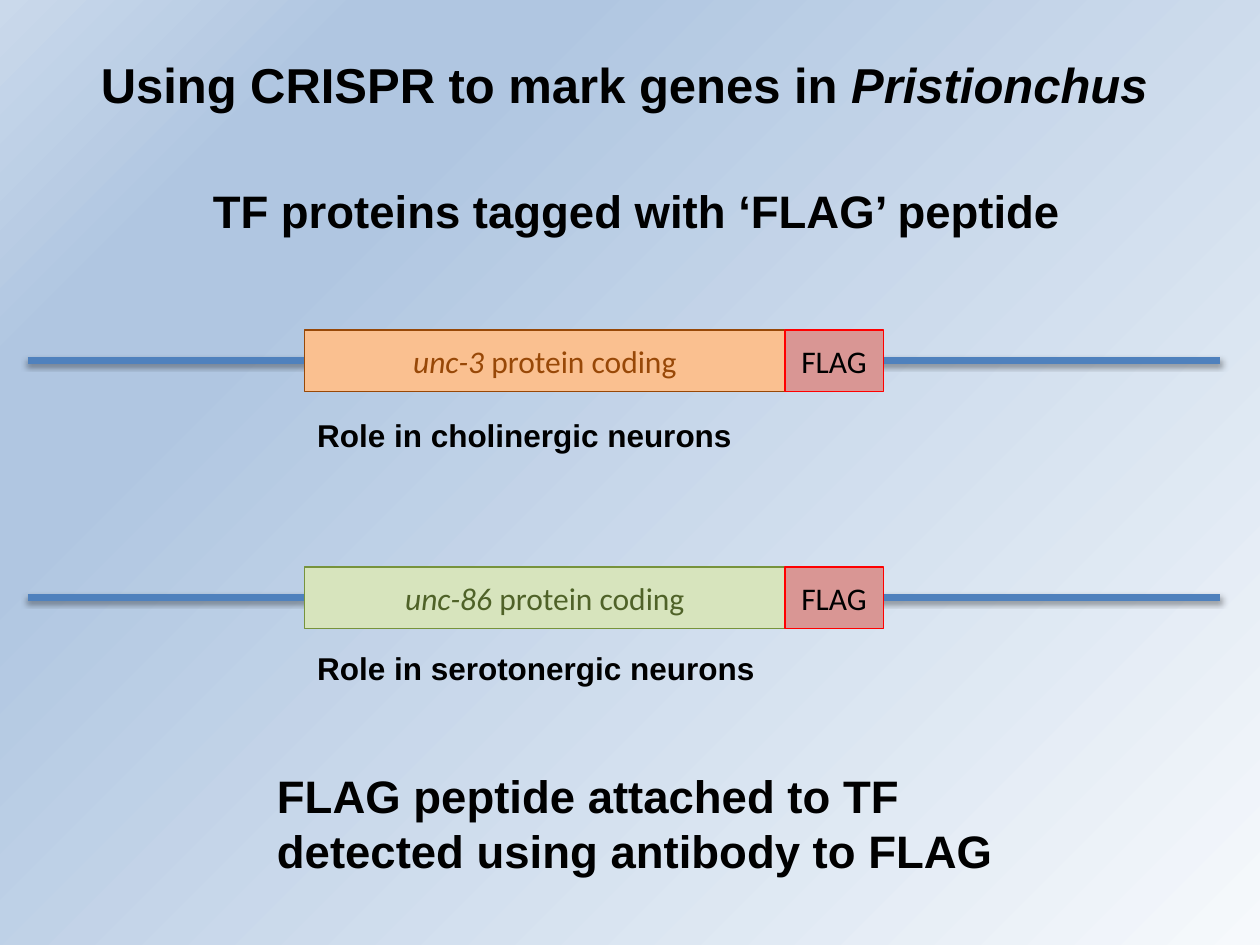
from lxml.etree import SubElement
from pptx import Presentation
from pptx.dml.color import RGBColor
from pptx.enum.shapes import MSO_CONNECTOR, MSO_SHAPE
from pptx.enum.text import MSO_ANCHOR, MSO_AUTO_SIZE, PP_ALIGN
from pptx.oxml import parse_xml
from pptx.oxml.ns import nsdecls, qn
from pptx.util import Pt

BLACK = "000000"
GRADIENT = [(0, "F6F9FC"), (74, "B0C6E1"), (83, "B0C6E1"), (100, "CAD9EB")]
GENES = [
    ("unc-3 ", "FAC090", "984807", "984807", "Role in cholinergic neurons", 234),
    ("unc-86 ", "D7E4BD", "77933C", "4F6228", "Role in serotonergic neurons", 367.2),
]


def color(value):
    """Turn a hex string into a colour."""
    return RGBColor.from_string(value)


def write_runs(paragraph, parts, size, name, text_color, bold=False):
    """Add (text, italic) parts to a paragraph in one font."""
    for text, italic in parts:
        run = paragraph.add_run()
        run.text = text
        font = run.font
        font.size, font.name = Pt(size), name
        font.bold, font.italic = bold, italic
        font.color.rgb = color(text_color)


def paint_background(slide):
    """Fill the slide with the diagonal gradient."""
    stops = "".join(
        f'<a:gs pos="{position * 1000}"><a:srgbClr val="{value}"/></a:gs>'
        for position, value in GRADIENT
    )
    background = parse_xml(
        f'<p:bg {nsdecls("p", "a")}><p:bgPr><a:gradFill rotWithShape="1">'
        f'<a:gsLst>{stops}</a:gsLst><a:lin ang="13500000" scaled="0"/>'
        "</a:gradFill><a:effectLst/></p:bgPr></p:bg>"
    )
    slide.element.cSld.insert(0, background)


def place_title(slide, left, top, width, height):
    """Move and format the title placeholder."""
    title = slide.shapes.title
    title.left, title.top = Pt(left), Pt(top)
    title.width, title.height = Pt(width), Pt(height)
    title.text_frame.vertical_anchor = MSO_ANCHOR.MIDDLE
    paragraph = title.text_frame.paragraphs[0]
    paragraph.alignment = PP_ALIGN.CENTER
    parts = [("Using CRISPR to mark genes in ", False), ("Pristionchus", True)]
    write_runs(paragraph, parts, 28, "Arial", BLACK, True)


def add_statement(slide, text, size, left, top, width, height, wrap=True):
    """Add a bold text box."""
    box = slide.shapes.add_textbox(Pt(left), Pt(top), Pt(width), Pt(height))
    frame = box.text_frame
    frame.word_wrap = wrap
    frame.auto_size = MSO_AUTO_SIZE.SHAPE_TO_FIT_TEXT
    write_runs(frame.paragraphs[0], [(text, False)], size, "Arial", BLACK, True)


def add_strand(group, left, right, y):
    """Add the shadowed DNA line."""
    strand = group.shapes.add_connector(
        MSO_CONNECTOR.STRAIGHT, Pt(left), Pt(y), Pt(right), Pt(y)
    )
    strand.line.color.rgb = color("4F81BD")
    strand.line.width = Pt(4)
    effects = SubElement(strand.element.spPr, qn("a:effectLst"))
    effects.append(parse_xml(
        f'<a:outerShdw {nsdecls("a")} blurRad="{Pt(3.1)}" dist="{Pt(1.6)}" dir="5400000" '
        'rotWithShape="0"><a:srgbClr val="000000"><a:alpha val="38000"/></a:srgbClr>'
        "</a:outerShdw>"
    ))


def add_segment(group, parts, colors, left, top, width, height):
    """Add a labelled rectangle coloured by (fill, line, text)."""
    fill, line, text_color = colors
    segment = group.shapes.add_shape(
        MSO_SHAPE.RECTANGLE, Pt(left), Pt(top), Pt(width), Pt(height)
    )
    segment.shadow.inherit = False
    segment.fill.solid()
    segment.fill.fore_color.rgb = color(fill)
    segment.line.color.rgb = color(line)
    segment.line.width = Pt(0.75)
    segment.text_frame.vertical_anchor = MSO_ANCHOR.MIDDLE
    paragraph = segment.text_frame.paragraphs[0]
    paragraph.alignment = PP_ALIGN.CENTER
    write_runs(paragraph, parts, 18, "Calibri", text_color)


def add_gene(slide, gene, colors, left, top, width, height):
    """Add one tagged gene on its strand."""
    group = slide.shapes.add_group_shape()
    gene_left, gene_width, tag_width = left + 158.4, 274.3, 56.2
    add_strand(group, left, left + width, top + height / 2 - 0.4)
    parts = [(gene, True), ("protein coding", False)]
    add_segment(group, parts, colors, gene_left, top, gene_width, height)
    add_segment(group, [("FLAG", False)], ("D99694", "FF0000", BLACK),
                gene_left + gene_width, top, tag_width, height)


def main():
    """Build and save the slide."""
    presentation = Presentation()
    presentation.slide_width, presentation.slide_height = Pt(720), Pt(540)
    slide = presentation.slides.add_slide(presentation.slide_layouts[5])
    paint_background(slide)
    place_title(slide, 8.6, 24.5, 696.2, 46.8)
    for index, (gene, fill, line, text_color, role, role_top) in enumerate(GENES):
        add_gene(slide, gene, (fill, line, text_color), 15.8, 188.6 + 135.4 * index, 681.1, 35.3)
        add_statement(slide, role, 18, 174.2, role_top, 429.8, 28.8)
    add_statement(slide, "TF proteins tagged with ‘FLAG’ peptide", 26,
                  114.5, 100.8, 503.3, 38.9, wrap=False)
    add_statement(slide, "FLAG peptide attached to TF detected using antibody to FLAG", 26,
                  151.2, 435.6, 429.8, 70.6)
    presentation.save("out.pptx")


if __name__ == "__main__":
    main()
